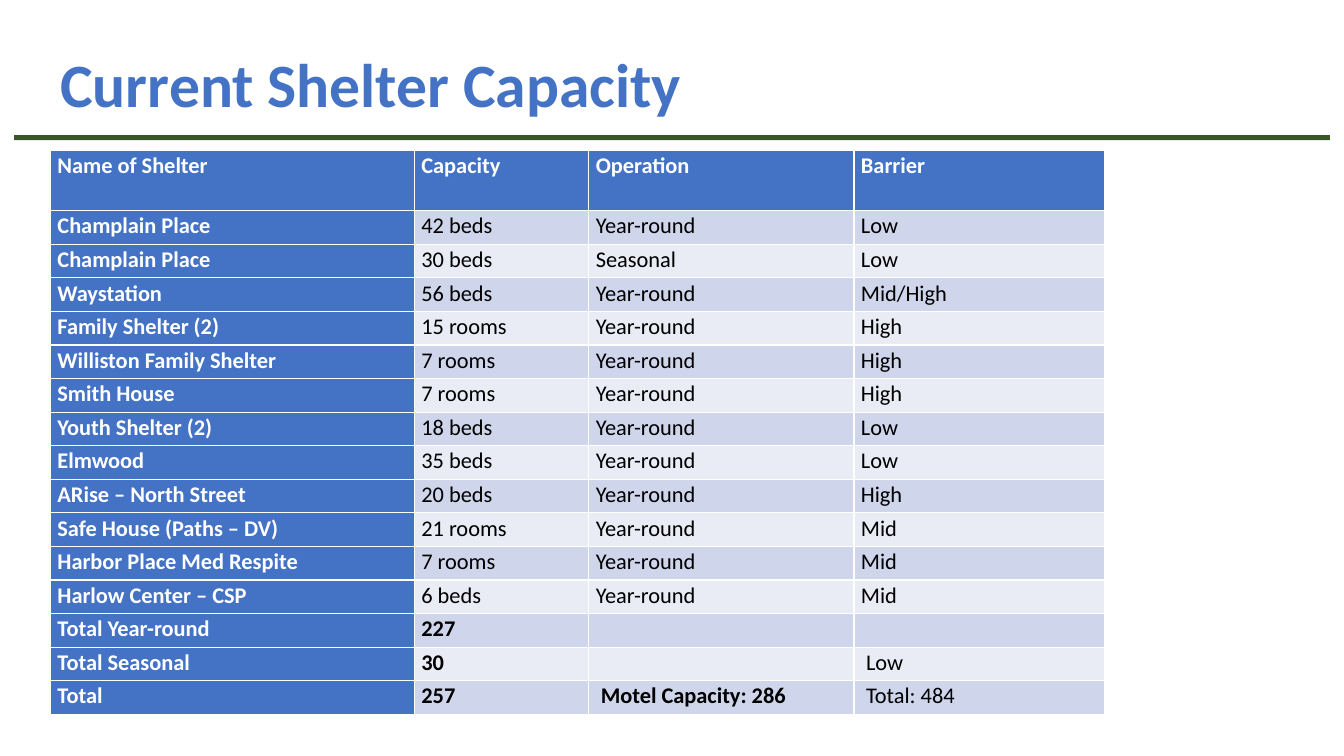
from pptx import Presentation
from pptx.dml.color import RGBColor
from pptx.enum.shapes import MSO_SHAPE as Shape
from pptx.util import Inches, Pt

BLUE, GREEN, WHITE, BLACK = "4472C4", "385723", "FFFFFF", "000000"
BANDS = ["CFD5EA", "E9EBF5"]
LEFT = Inches(0.5)


def color(value):
    return RGBColor.from_string(value)


def set_font(paragraph, size, value, bold):
    font = paragraph.font
    font.name, font.size, font.bold = "Calibri", Pt(size), bold
    font.color.rgb = color(value)


presentation = Presentation()
presentation.slide_width, presentation.slide_height = Inches(13.33), Inches(7.5)
slide = presentation.slides.add_slide(presentation.slide_layouts[6])

# Rule under the title
rule = slide.shapes.add_shape(
    Shape.RECTANGLE, Inches(0.14), Inches(1.34), Inches(13.05), Inches(0.05))
rule.shadow.inherit = False
rule.fill.solid()
rule.fill.fore_color.rgb = color(GREEN)
rule.line.fill.background()

# Shelter table
shelters = [
    ("Name of Shelter", "Capacity", "Operation", "Barrier"),
    ("Champlain Place", "42 beds", "Year-round", "Low"),
    ("Champlain Place", "30 beds", "Seasonal", "Low"),
    ("Waystation", "56 beds", "Year-round", "Mid/High"),
    ("Family Shelter (2)", "15 rooms", "Year-round", "High"),
    ("Williston Family Shelter", "7 rooms", "Year-round", "High"),
    ("Smith House", "7 rooms", "Year-round", "High"),
    ("Youth Shelter (2)", "18 beds", "Year-round", "Low"),
    ("Elmwood", "35 beds", "Year-round", "Low"),
    ("ARise – North Street", "20 beds", "Year-round", "High"),
    ("Safe House (Paths – DV)", "21 rooms", "Year-round", "Mid"),
    ("Harbor Place Med Respite", "7 rooms", "Year-round", "Mid"),
    ("Harlow Center – CSP", "6 beds", "Year-round", "Mid"),
    ("Total Year-round", "227", "", ""),
    ("Total Seasonal", "30", "", "Low"),
    ("Total", "257", "Motel Capacity: 286", "Total: 484"),
]
column_widths = [3.61, 1.73, 2.63, 2.49]
first_total = len(shelters) - 3
header_height, table_height = Inches(0.6), Inches(5.6)
body_height = (table_height - header_height) // (len(shelters) - 1)

table = slide.shapes.add_table(
    len(shelters), len(column_widths), LEFT, Inches(1.49),
    Inches(sum(column_widths)), table_height).table
table.first_col = True
for column, width in zip(table.columns, column_widths):
    column.width = Inches(width)

for r, values in enumerate(shelters):
    table.rows[r].height = body_height if r else header_height
    for c, value in enumerate(values):
        cell = table.cell(r, c)
        heading = r == 0 or c == 0
        total = r >= first_total
        # The last two columns of the totals are set in slightly
        cell.margin_left = Inches(0.12 if total and c > 1 else 0.07)
        cell.margin_right = Inches(0.07)
        cell.margin_top = cell.margin_bottom = 0
        cell.fill.solid()
        cell.fill.fore_color.rgb = color(BLUE if heading else BANDS[(r - 1) % 2])
        cell.text = value
        paragraph = cell.text_frame.paragraphs[0]
        paragraph.line_spacing = 1.07
        set_font(paragraph, 16, WHITE if heading else BLACK,
                 heading or (total and c < 3))

# Title
title = slide.shapes.add_textbox(LEFT, Inches(0.41), Inches(7.9), Inches(0.84))
title.text_frame.word_wrap = True
title.text_frame.text = "Current Shelter Capacity"
set_font(title.text_frame.paragraphs[0], 44, BLUE, True)

presentation.save("out.pptx")
